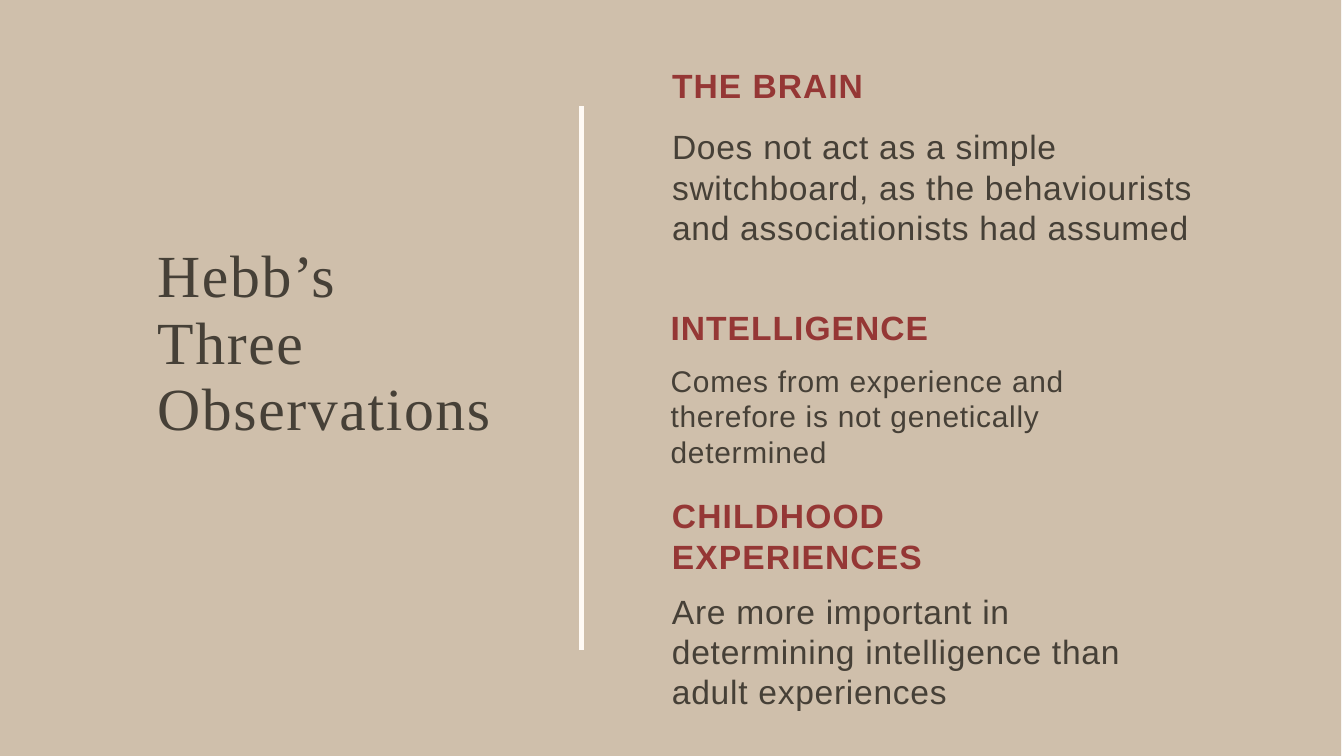
import pptx
import pptx.dml.color
import pptx.enum.shapes
import pptx.enum.text
import pptx.oxml.ns
import pptx.util
import lxml.etree

UNIT = 9144
HUES = {"sand": "CFBFAB", "ink": "464037", "red": "953735", "cream": "FFFAF5"}
SANS, SERIF = "Arial", "Times New Roman"


def px(num):
    """Turn px, a hundred to the inch, into EMU."""
    return pptx.util.Emu(num * UNIT)


def hue(name):
    """Look up a colour by name."""
    return pptx.dml.color.RGBColor.from_string(HUES[name])


def head(text, gap=1, track=110):
    """Describe a red heading."""
    return dict(text=text, size=36, tone="red", bold=True, gap=gap, track=track)


def body(text, size=36, gap=1):
    """Describe a line of body text."""
    return dict(text=text, size=size, tone="ink", bold=False, gap=gap, track=80)


def fill(shape, box, paras, top=1, font=SANS, lead=None):
    """Place a text shape in its box and write its paragraphs."""
    shape.left, shape.top, shape.width, shape.height = map(px, box)
    frame = shape.text_frame
    frame.word_wrap = True
    frame.auto_size = pptx.enum.text.MSO_AUTO_SIZE.SHAPE_TO_FIT_TEXT
    frame.vertical_anchor = pptx.enum.text.MSO_ANCHOR.TOP
    frame.margin_left = frame.margin_right = frame.margin_bottom = 0
    frame.margin_top = px(top)
    for num, item in enumerate(paras):
        para = frame.add_paragraph() if num else frame.paragraphs[0]
        para.alignment = pptx.enum.text.PP_ALIGN.LEFT
        para.space_before = pptx.util.Pt(item["gap"])
        para.line_spacing = pptx.util.Pt(lead) if lead else 1.0
        props = para._p.get_or_add_pPr()
        props.set("marL", str(px(1)))
        props.set("indent", "0")
        run = para.add_run()
        run.text = item["text"]
        run.font.name = font
        run.font.size = pptx.util.Pt(item["size"])
        run.font.bold = item["bold"]
        run.font.color.rgb = hue(item["tone"])
        run._r.get_or_add_rPr().set("spc", str(item["track"]))


def text(slide, box, paras, **opts):
    """Add a text box."""
    fill(slide.shapes.add_textbox(*map(px, box)), box, paras, **opts)


def panel(slide, box):
    """Add the sand background panel."""
    shape = slide.shapes.add_shape(
        pptx.enum.shapes.MSO_SHAPE.RECTANGLE, *map(px, box))
    shape.shadow.inherit = False
    shape.fill.solid()
    shape.fill.fore_color.rgb = hue("sand")
    shape.line.fill.background()


def topic(slide, box):
    """Add the serif topic on the left and the rule beside it."""
    left, top, wide, high = box
    item = dict(body("Hebb’s Three Observations", 64), track=180)
    text(slide, (left, top + 202, 498, 300), [item], font=SERIF, lead=71.5)
    right = left + wide
    rule = slide.shapes.add_connector(
        pptx.enum.shapes.MSO_CONNECTOR.STRAIGHT,
        px(right), px(top), px(right), px(top + high))
    rule.line.color.rgb = hue("cream")
    rule.line.width = pptx.util.Pt(5.25)
    lxml.etree.SubElement(
        rule._element.spPr, pptx.oxml.ns.qn("a:effectLst"))


def points(slide, box):
    """Add the three observations on the right."""
    left, top, wide, high = box
    text(slide, (left, top + 92, wide, 183), [
        body("Does not act as a simple switchboard, as the behaviourists "
             "and associationists had assumed")])
    title = slide.shapes.title
    slide.shapes._spTree.append(title._element)
    fill(title, (left, top, 584, 63), [head("THE BRAIN")])
    text(slide, (left - 2, top + 328, 636, 279), [
        head("INTELLIGENCE", 24.8),
        body("Comes from experience and therefore is not genetically "
             "determined", 32, 15.8)], top=34)
    text(slide, (left, top + high - 360, 693, 360), [
        head("CHILDHOOD EXPERIENCES", 24.8, 120),
        body("Are more important in determining intelligence than adult "
             "experiences", gap=15.8)], top=34)


def main():
    """Build and save the slide."""
    deck = pptx.Presentation()
    deck.slide_width, deck.slide_height = px(2000), px(1125)
    slide = deck.slides.add_slide(deck.slide_layouts[5])
    panel(slide, (-4, 0, 2000, 1125))
    topic(slide, (233, 158, 632, 809))
    points(slide, (999, 95, 801, 968))
    deck.save("out.pptx")


if __name__ == "__main__":
    main()
